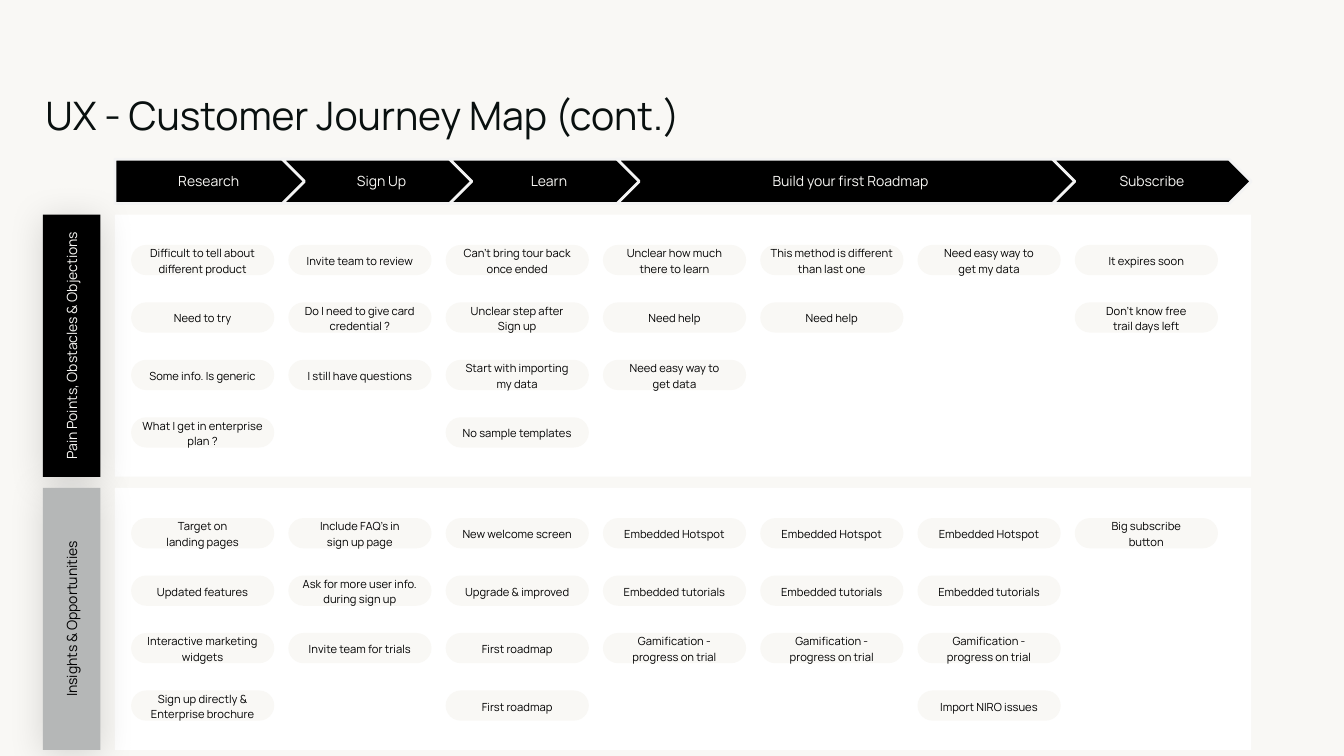
from dataclasses import dataclass

from lxml.etree import SubElement
from pptx import Presentation
from pptx.dml.color import RGBColor
from pptx.enum.shapes import MSO_SHAPE as Preset
from pptx.enum.text import MSO_ANCHOR as Anchor, MSO_AUTO_SIZE as AutoSize, PP_ALIGN as Align
from pptx.oxml.ns import qn
from pptx.util import Pt

EMU_PER_PX = 9144


@dataclass(frozen=True)
class Theme:
    """Colours, font and type sizes of the slide."""
    paper: str = "F9F8F5"
    panel: str = "FFFFFF"
    black: str = "000000"
    grey: str = "B5B7B7"
    edge: str = "F4F4F4"
    title: str = "09100F"
    font: str = "Manrope"
    title_size: int = 28
    heading_size: int = 10
    note_size: int = 8


THEME = Theme()

PHASES = [("Research", 197), ("Sign Up", 197), ("Learn", 197),
          ("Build your first Roadmap", 463), ("Subscribe", 197)]
PHASE_LEFT, PHASE_TOP, PHASE_HEIGHT, PHASE_OVERLAP = 114, 158, 44, 31

PANEL_LEFT, PANEL_TOP, PANEL_WIDTH, PANEL_HEIGHT, PANEL_PITCH = 114, 213, 1127, 260, 271
LABEL_CENTER, LABEL_THICKNESS = 71, 57
NOTE_LEFT, NOTE_OFFSET, NOTE_WIDTH, NOTE_HEIGHT = 130, 30, 142, 30
COLUMN_PITCH, ROW_PITCH = 156, 57

PAIN_POINTS = [
    ["Difficult to tell about different product", "Invite team to review",
     "Can’t bring tour back once ended", "Unclear how much\nthere to learn",
     "This method is different than last one", "Need easy way to\nget my data",
     "It expires soon"],
    ["Need to try", "Do I need to give card credential ?",
     "Unclear step after\nSign up", "Need help", "Need help", None,
     "Don’t know free\ntrail days left"],
    ["Some info. Is generic", "I still have questions",
     "Start with importing\nmy data", "Need easy way to\nget data"],
    ["What I get in enterprise plan ?", None, "No sample templates"],
]
INSIGHTS = [
    ["Target on\nlanding pages", "Include FAQ’s in\nsign up page", "New welcome screen",
     *["Embedded Hotspot"] * 3, "Big subscribe\nbutton"],
    ["Updated features", "Ask for more user info. during sign up", "Upgrade & improved",
     *["Embedded tutorials"] * 3],
    ["Interactive marketing widgets", "Invite team for trials", "First roadmap",
     *["Gamification -\nprogress on trial"] * 3],
    ["Sign up directly & Enterprise brochure", None, "First roadmap", None, None,
     "Import NIRO issues"],
]
SECTIONS = [
    ("Pain Points, Obstacles & Objections", THEME.black, THEME.paper, PAIN_POINTS),
    ("Insights & Opportunities", THEME.grey, THEME.black, INSIGHTS),
]


def px(*lengths):
    """Turn pixel lengths into EMU."""
    return [round(length * EMU_PER_PX) for length in lengths]


def paint(fill, color):
    """Make a fill solid in a hex colour."""
    fill.solid()
    fill.fore_color.rgb = RGBColor.from_string(color)


def write(shape, text, *, size, color, align=Align.CENTER, anchor=Anchor.MIDDLE,
          line_spacing=1.0, space_after=0):
    """Fill a shape with text, one paragraph to a line."""
    frame = shape.text_frame
    frame.text = text
    frame.word_wrap = True
    frame.auto_size = AutoSize.NONE
    frame.vertical_anchor = anchor
    frame.margin_left = frame.margin_right = frame.margin_top = frame.margin_bottom = 0
    for paragraph in frame.paragraphs:
        paragraph.alignment = align
        paragraph.line_spacing = line_spacing
        paragraph.space_before = Pt(0)
        paragraph.space_after = Pt(space_after)
        for run in paragraph.runs:
            run.font.name = THEME.font
            run.font.size = Pt(size)
            run.font.color.rgb = RGBColor.from_string(color)


def add_block(slide, preset, bounds, fill, corner):
    """Add a flat, unlined preset shape."""
    block = slide.shapes.add_shape(preset, *px(*bounds))
    block.adjustments[0] = corner
    block.shadow.inherit = False
    block.line.fill.background()
    paint(block.fill, fill)
    return block


def add_soft_shadow(block):
    """Give a block a blurred shadow falling downwards."""
    effects = block._element.spPr.find(qn("a:effectLst"))
    shadow = SubElement(effects, qn("a:outerShdw"), blurRad=str(Pt(26)), dist=str(Pt(3)),
                        dir="5400000", algn="ctr", rotWithShape="0")
    tint = SubElement(shadow, qn("a:srgbClr"), val=THEME.black)
    SubElement(tint, qn("a:alpha"), val="15000")


def add_title(slide, text):
    """Place and format the title placeholder."""
    title = slide.shapes.title
    title.left, title.top, title.width, title.height = px(45, 91, 923, 51)
    paint(title.fill, THEME.paper)
    write(title, text, size=THEME.title_size, color=THEME.title, align=Align.LEFT,
          anchor=Anchor.TOP, space_after=10)


def add_phases(slide):
    """Add the row of interlocking journey phases."""
    left = PHASE_LEFT
    for index, (name, width) in enumerate(PHASES):
        preset = Preset.CHEVRON if index else Preset.PENTAGON
        phase = add_block(slide, preset, (left, PHASE_TOP, width, PHASE_HEIGHT),
                          THEME.black, 0.5)
        paint(phase.line.fill, THEME.edge)
        phase.line.width = Pt(2)
        write(phase, name, size=THEME.heading_size, color=THEME.paper)
        left += width - PHASE_OVERLAP


def add_label(slide, text, top, fill, color):
    """Add a section label that reads upwards."""
    bounds = (LABEL_CENTER - PANEL_HEIGHT / 2, top + (PANEL_HEIGHT - LABEL_THICKNESS) / 2,
              PANEL_HEIGHT, LABEL_THICKNESS)
    label = add_block(slide, Preset.ROUNDED_RECTANGLE, bounds, fill, 0)
    label.rotation = 270
    add_soft_shadow(label)
    write(label, text, size=THEME.heading_size, color=color)


def add_notes_grid(slide, rows, top):
    """Add the pill-shaped notes, skipping empty cells."""
    for row, notes in enumerate(rows):
        for column, text in enumerate(notes):
            if text:
                bounds = (NOTE_LEFT + column * COLUMN_PITCH, top + row * ROW_PITCH,
                          NOTE_WIDTH, NOTE_HEIGHT)
                note = add_block(slide, Preset.ROUNDED_RECTANGLE, bounds, THEME.paper, 0.5)
                write(note, text, size=THEME.note_size, color=THEME.black,
                      line_spacing=1.15)


def add_section(slide, index, label, fill, color, rows):
    """Add a panel with its label and notes."""
    top = PANEL_TOP + index * PANEL_PITCH
    add_block(slide, Preset.ROUNDED_RECTANGLE,
              (PANEL_LEFT, top, PANEL_WIDTH, PANEL_HEIGHT), THEME.panel, 0)
    add_label(slide, label, top, fill, color)
    add_notes_grid(slide, rows, top + NOTE_OFFSET)


def main():
    """Build the journey map slide and save it."""
    deck = Presentation()
    deck.slide_width, deck.slide_height = px(1333, 750)
    slide = deck.slides.add_slide(deck.slide_layouts.get_by_name("Title Only"))
    paint(slide.background.fill, THEME.paper)
    add_title(slide, "UX - Customer Journey Map (cont.)")
    add_phases(slide)
    for index, section in enumerate(SECTIONS):
        add_section(slide, index, *section)
    deck.save("out.pptx")


if __name__ == "__main__":
    main()
